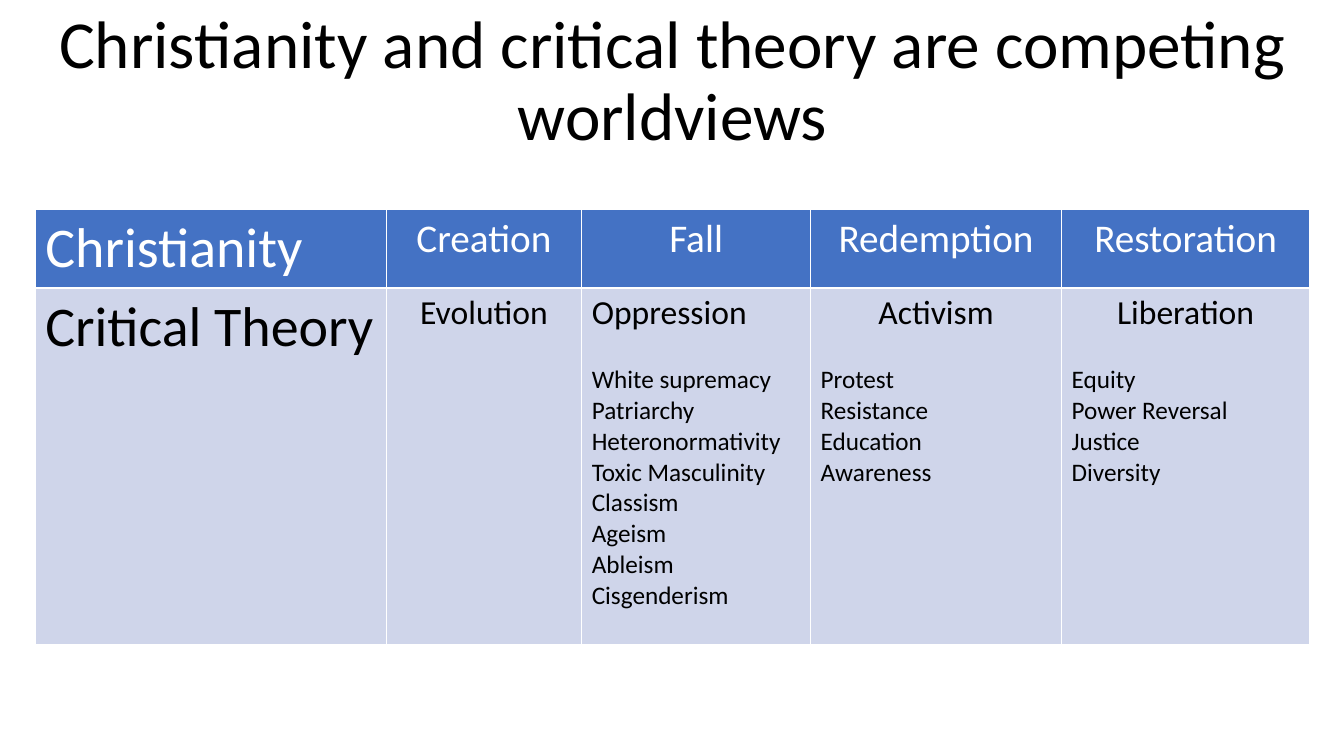
from dataclasses import dataclass

from lxml.etree import SubElement
from pptx import Presentation
from pptx.dml.color import RGBColor
from pptx.enum.text import MSO_ANCHOR, MSO_AUTO_SIZE, PP_ALIGN
from pptx.oxml.ns import qn
from pptx.util import Inches, Pt


@dataclass(frozen=True)
class Theme:
    font: str = "Calibri"
    black: str = "000000"
    white: str = "FFFFFF"
    header_fill: str = "4472C4"
    body_fill: str = "CFD5EA"
    title_size: int = 48
    label_size: int = 40
    header_size: int = 28
    topic_size: int = 24
    item_size: int = 18
    item_gap: int = 22
    border: int = 1


@dataclass(frozen=True)
class Stage:
    """One column: its Christian stage and the critical theory counterpart."""
    width: float
    header: str
    topic: str
    items: tuple[str, ...] = ()
    header_size: int = Theme.header_size
    topic_size: int = Theme.topic_size
    header_align: PP_ALIGN = PP_ALIGN.CENTER
    topic_align: PP_ALIGN = PP_ALIGN.CENTER


THEME = Theme()
LEFT, WIDTH = 0.35, 12.64
ROW_HEIGHTS = (0.77, 3.54)
STAGES = (
    Stage(3.48, "Christianity", "Critical Theory",
          header_size=THEME.label_size, topic_size=THEME.label_size,
          header_align=PP_ALIGN.LEFT, topic_align=PP_ALIGN.LEFT),
    Stage(1.94, "Creation", "Evolution"),
    Stage(2.27, "Fall", "Oppression",
          ("White supremacy", "Patriarchy", "Heteronormativity",
           "Toxic Masculinity", "Classism", "Ageism", "Ableism",
           "Cisgenderism"), topic_align=PP_ALIGN.LEFT),
    Stage(2.49, "Redemption", "Activism",
          ("Protest", "Resistance", "Education", "Awareness")),
    Stage(2.46, "Restoration", "Liberation",
          ("Equity", "Power Reversal", "Justice", "Diversity")),
)


def write(p, text: str, size: int, color: str, align: PP_ALIGN) -> None:
    p.alignment = align
    r = p.add_run()
    r.text = text
    r.font.name = THEME.font
    r.font.size = Pt(size)
    r.font.color.rgb = RGBColor.from_string(color)


def style_cell(cell, fill: str) -> None:
    # Borders come before the fill in the cell properties
    tc_pr = cell._tc.get_or_add_tcPr()
    for side in ("lnL", "lnR", "lnT", "lnB"):
        ln = SubElement(tc_pr, qn(f"a:{side}"), w=str(Pt(THEME.border)))
        SubElement(SubElement(ln, qn("a:solidFill")), qn("a:srgbClr"),
                   val=THEME.white)
    cell.fill.solid()
    cell.fill.fore_color.rgb = RGBColor.from_string(fill)


def add_title(s, text: str) -> None:
    tf = s.shapes.add_textbox(Inches(LEFT), Inches(0.4),
                              Inches(WIDTH), Inches(1.57)).text_frame
    tf.word_wrap = True
    tf.auto_size = MSO_AUTO_SIZE.NONE
    tf.vertical_anchor = MSO_ANCHOR.MIDDLE
    tf.margin_bottom = Inches(0.78)
    p = tf.paragraphs[0]
    p.line_spacing = 0.9
    write(p, text, THEME.title_size, THEME.black, PP_ALIGN.CENTER)


def add_comparison(s, stages: tuple[Stage, ...]) -> None:
    table = s.shapes.add_table(
        len(ROW_HEIGHTS), len(stages), Inches(LEFT), Inches(2.08),
        Inches(WIDTH), Inches(sum(ROW_HEIGHTS))).table
    for row, height in zip(table.rows, ROW_HEIGHTS):
        row.height = Inches(height)

    for col, stage in enumerate(stages):
        table.columns[col].width = Inches(stage.width)
        header, body = table.cell(0, col), table.cell(1, col)
        style_cell(header, THEME.header_fill)
        style_cell(body, THEME.body_fill)
        write(header.text_frame.paragraphs[0], stage.header,
              stage.header_size, THEME.white, stage.header_align)
        tf = body.text_frame
        write(tf.paragraphs[0], stage.topic,
              stage.topic_size, THEME.black, stage.topic_align)
        # Examples below the topic
        for i, item in enumerate(stage.items):
            p = tf.add_paragraph()
            if i == 0:
                p.space_before = Pt(THEME.item_gap)
            write(p, item, THEME.item_size, THEME.black, PP_ALIGN.LEFT)


def main() -> None:
    prs = Presentation()
    prs.slide_width, prs.slide_height = Inches(13.33), Inches(7.5)
    s = prs.slides.add_slide(prs.slide_layouts[6])
    add_title(s, "Christianity and critical theory are competing worldviews")
    add_comparison(s, STAGES)
    prs.save("out.pptx")


if __name__ == "__main__":
    main()
